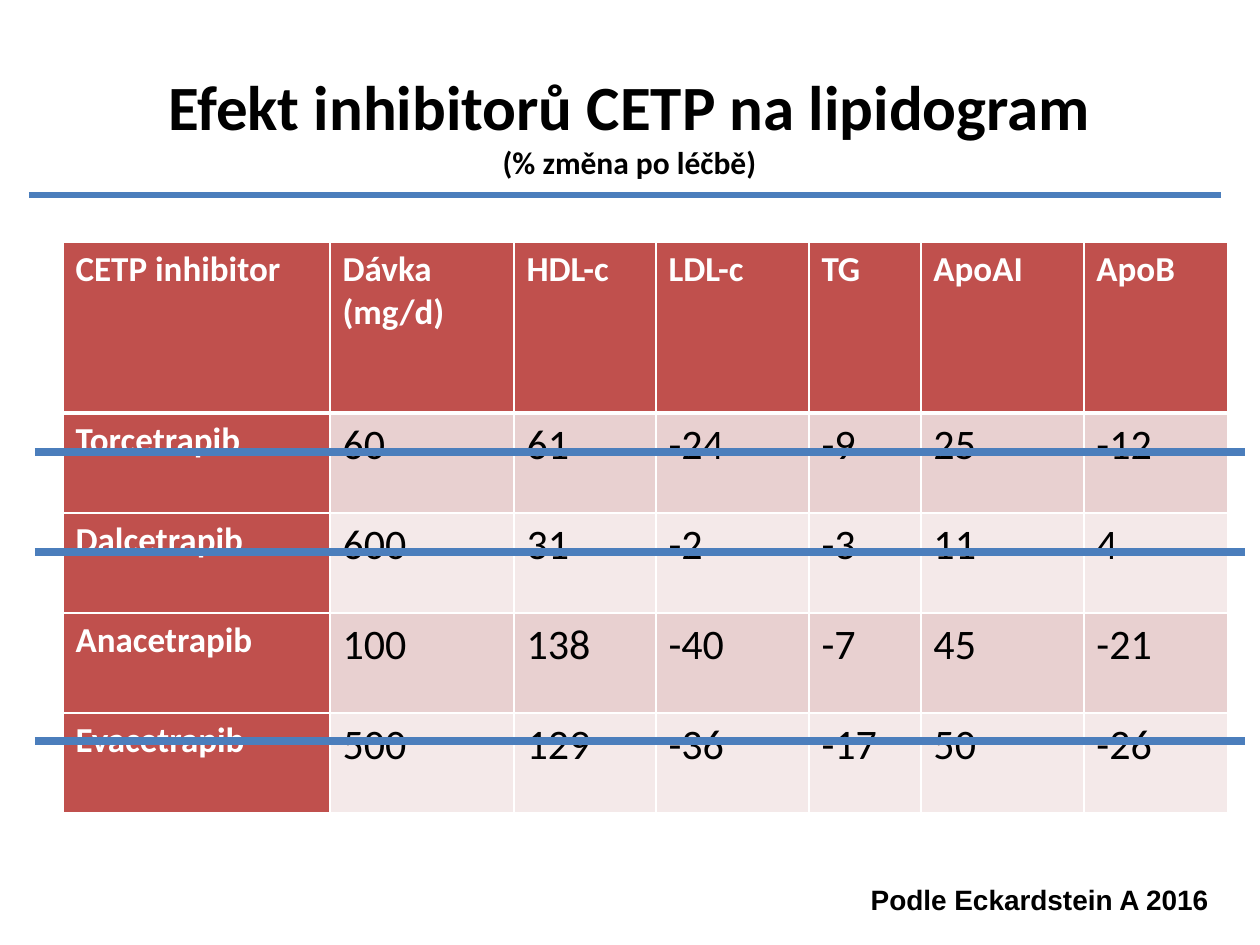
from lxml.etree import SubElement
from pptx import Presentation
from pptx.dml.color import RGBColor
from pptx.enum.shapes import MSO_CONNECTOR
from pptx.enum.text import MSO_ANCHOR, PP_ALIGN
from pptx.oxml.ns import qn
from pptx.util import Pt

PX = 914400 / 126
COLORS = {
    "black": "000000", "white": "FFFFFF", "red": "C0504D",
    "rose": "E8D0D0", "pale": "F4E9E9", "blue": "4B7EBC",
}
COLS = [267, 184, 142, 153, 112, 163, 144]
ROWS = [171, 100, 100, 100, 100]
DATA = [
    ["CETP inhibitor", "Dávka (mg/d)", "HDL-c", "LDL-c", "TG", "ApoAI", "ApoB"],
    ["Torcetrapib", "60", "61", "-24", "-9", "25", "-12"],
    ["Dalcetrapib", "600", "31", "-2", "-3", "11", "4"],
    ["Anacetrapib", "100", "138", "-40", "-7", "45", "-21"],
    ["Evacetrapib", "500", "129", "-36", "-17", "50", "-26"],
]


def emu(*sizes):
    return [round(size * PX) for size in sizes]


def color(name):
    return RGBColor.from_string(COLORS[name])


def style(run, size, font="Calibri", ink="black", bold=True):
    run.font.size = Pt(size)
    run.font.name = font
    run.font.bold = bold
    run.font.color.rgb = color(ink)


def add_text(slide, box, text, sizes, font, align):
    """Place one paragraph whose runs take the sizes in turn."""
    frame = slide.shapes.add_textbox(*emu(*box)).text_frame
    frame.word_wrap = True
    frame.text = text
    para = frame.paragraphs[0]
    para.alignment = align
    for run, size in zip(para.runs, sizes):
        style(run, size, font)
    return frame


def add_line(slide, left, top, width, weight):
    line = slide.shapes.add_connector(
        MSO_CONNECTOR.STRAIGHT, *emu(left, top, left + width, top))
    line.line.color.rgb = color("blue")
    line.line.width = Pt(weight)
    SubElement(line._element.spPr, qn("a:effectLst"))


def add_border(cell, side, weight):
    edge = SubElement(cell._tc.get_or_add_tcPr(), qn(f"a:ln{side}"), w=str(Pt(weight)))
    fill = SubElement(edge, qn("a:solidFill"))
    SubElement(fill, qn("a:srgbClr"), val=COLORS["white"])


def fill_cell(cell, text, row, col):
    head = row == 0 or col == 0
    # The rule under the header row is thicker than the rest of the grid.
    edges = {"L": 1, "R": 1, "T": 3 if row == 1 else 1, "B": 3 if row == 0 else 1}
    for side, weight in edges.items():
        add_border(cell, side, weight)
    cell.fill.solid()
    cell.fill.fore_color.rgb = color("red" if head else "rose" if row % 2 else "pale")
    cell.text = text
    run = cell.text_frame.paragraphs[0].runs[0]
    style(run, 20 if head else 24, ink="white" if head else "black", bold=head)


def add_title(slide, left, top, width, height):
    frame = add_text(slide, (left, top, width, height),
                     "Efekt inhibitorů CETP na lipidogram\v(% změna po léčbě)",
                     [36, 18], "Calibri", PP_ALIGN.CENTER)
    frame.vertical_anchor = MSO_ANCHOR.MIDDLE
    add_line(slide, left - 82, top + 121, 1192, 3)


def add_grid(slide, left, top):
    """Draw the table and the lines across three of its rows."""
    table = slide.shapes.add_table(
        len(ROWS), len(COLS), *emu(left, top, sum(COLS), sum(ROWS))).table
    for column, width in zip(table.columns, COLS):
        column.width = emu(width)[0]
    for line, height in zip(table.rows, ROWS):
        line.height = emu(height)[0]
    for row, texts in enumerate(DATA):
        for col, text in enumerate(texts):
            fill_cell(table.cell(row, col), text, row, col)
    for drop in (210, 310, 499):
        add_line(slide, left - 28, top + drop, 1210, 4.5)


def add_source(slide, *box):
    add_text(slide, box, "Podle Eckardstein A 2016", [16], "Arial", PP_ALIGN.RIGHT)


def main():
    deck = Presentation()
    deck.slide_width, deck.slide_height = emu(1260, 945)
    slide = deck.slides.add_slide(deck.slide_layouts[6])
    add_title(slide, 111, 74, 1037, 101)
    add_grid(slide, 63, 242)
    add_source(slide, 423, 876, 798, 47)
    deck.save("out.pptx")


if __name__ == "__main__":
    main()
